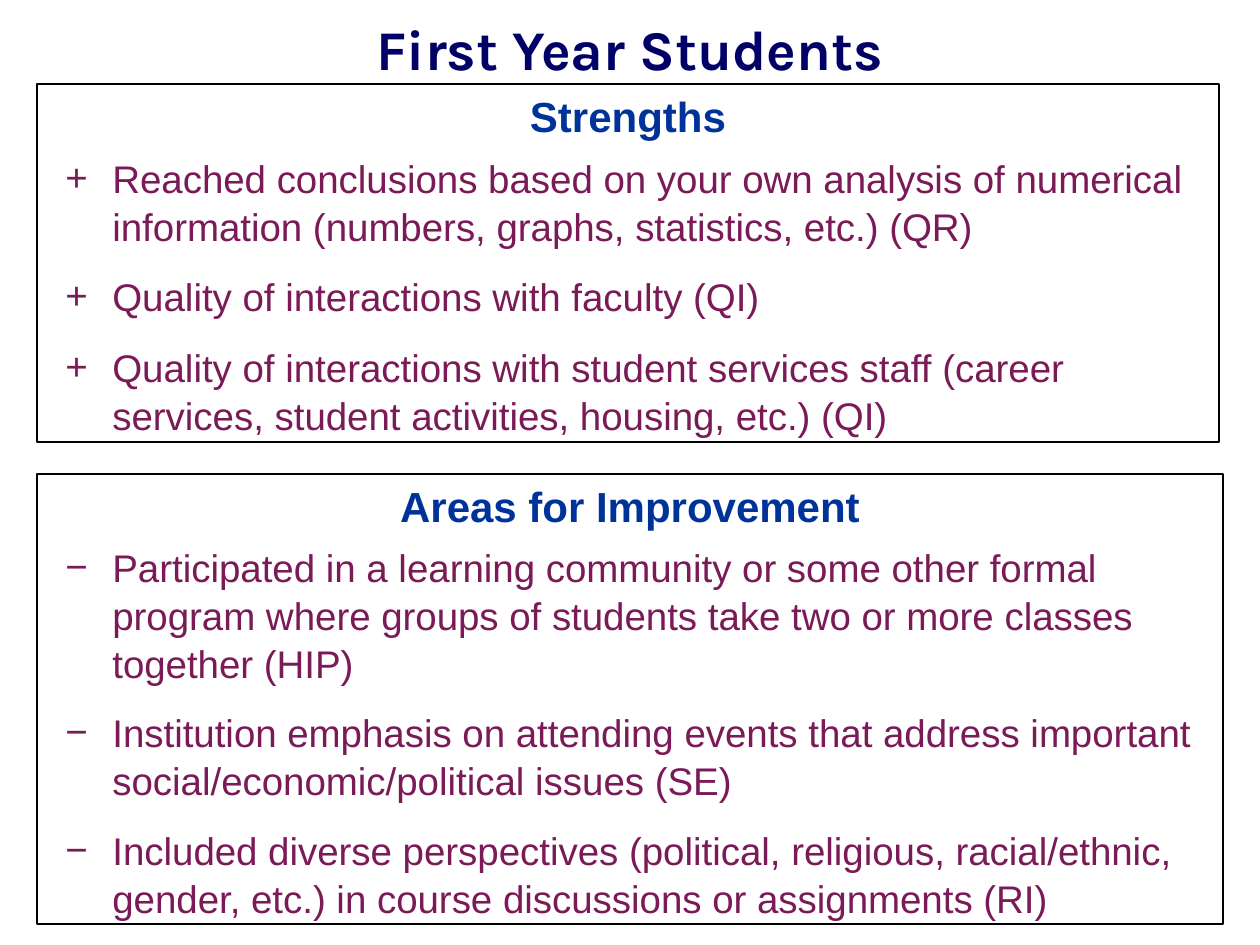
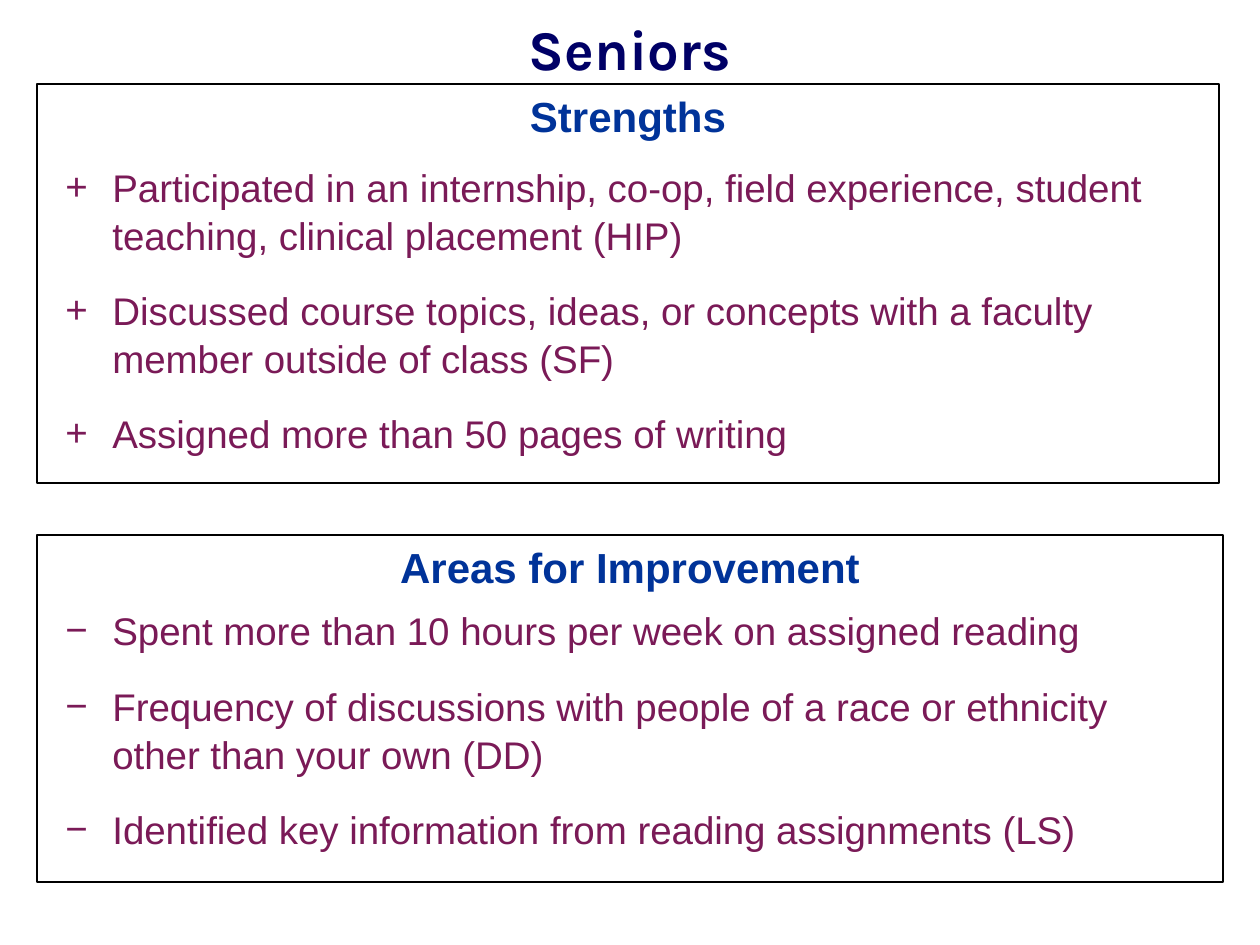
from lxml import etree
from pptx import Presentation
from pptx.dml.color import RGBColor
from pptx.enum.shapes import MSO_SHAPE
from pptx.enum.text import MSO_ANCHOR, MSO_AUTO_SIZE, PP_ALIGN
from pptx.oxml.ns import qn
from pptx.util import Emu, Pt

RECTANGLE = MSO_SHAPE.RECTANGLE
TOP = MSO_ANCHOR.TOP
GROW = MSO_AUTO_SIZE.SHAPE_TO_FIT_TEXT
CENTER = PP_ALIGN.CENTER
LEFT = PP_ALIGN.LEFT

PX_PER_INCH = 126
BODY_FONT = "Arial"
TITLE_FONT = "Karla"
NAVY = "000066"
BLUE = "003399"
PLUM = "7A1A57"
BLACK = "000000"

PANEL_LEFT = 37
STRENGTHS_WIDTH = 1182
IMPROVEMENT_WIDTH = 1186
ITEM_LEFT = 53
ITEM_WIDTH = 1165
ITEM_INDENT = 47
LINE_HEIGHT = 47
ITEM_PADDING = 12


def px(length):
    return Emu(round(length * 914400 / PX_PER_INCH))


def color(value):
    return RGBColor.from_string(value)


def write_text(shape, text, size, ink, font=BODY_FONT, bold=False,
               align=LEFT, before=0, after=0, spacing=None):
    frame = shape.text_frame
    frame.word_wrap = True
    frame.vertical_anchor = TOP
    para = frame.paragraphs[0]
    para.alignment = align
    para.space_before = Pt(before)
    para.space_after = Pt(after)
    if spacing:
        para.line_spacing = spacing
    span = para.add_run()
    span.text = text
    span.font.name = font
    span.font.size = Pt(size)
    span.font.bold = bold
    span.font.color.rgb = color(ink)
    return para


def add_bullet(para, mark):
    properties = para._p.get_or_add_pPr()
    properties.set("marL", str(px(ITEM_INDENT)))
    properties.set("indent", str(-px(ITEM_INDENT)))
    etree.SubElement(properties, qn("a:buFont")).set("typeface", BODY_FONT)
    etree.SubElement(properties, qn("a:buChar")).set("char", mark)


def add_title(page, text):
    box = page.shapes.add_textbox(px(37), px(15), px(1186), px(95))
    box.text_frame.margin_top = box.text_frame.margin_bottom = 0
    write_text(box, text, 32, NAVY, font=TITLE_FONT, bold=True, align=CENTER)


def add_item(page, top, lines, text, mark):
    height = ITEM_PADDING + LINE_HEIGHT * lines
    box = page.shapes.add_textbox(px(ITEM_LEFT), px(top), px(ITEM_WIDTH), px(height))
    box.text_frame.auto_size = GROW
    para = write_text(box, text, 22, PLUM, before=3, after=6, spacing=1.04)
    add_bullet(para, mark)
    return top + height


def add_panel(page, heading, mark, width, top, height, first_item, gap, items):
    panel = page.shapes.add_shape(RECTANGLE, px(PANEL_LEFT), px(top), px(width), px(height))
    panel.shadow.inherit = False
    panel.fill.background()
    panel.line.color.rgb = color(BLACK)
    panel.line.width = Pt(0.75)
    write_text(panel, heading, 24, BLUE, bold=True, align=CENTER, before=3, after=12)
    item_top = first_item
    for lines, text in items:
        item_top = add_item(page, item_top, lines, text, mark) + gap


def add_group_page(deck, title, gap, strengths, improvements):
    page = deck.slides.add_slide(deck.slide_layouts[6])
    add_panel(page, "Areas for Improvement", "−", IMPROVEMENT_WIDTH, gap=gap, **improvements)
    add_title(page, title)
    add_panel(page, "Strengths", "+", STRENGTHS_WIDTH, gap=gap, **strengths)


def main():
    deck = Presentation()
    deck.slide_width = px(1260)
    deck.slide_height = px(945)

    add_group_page(
        deck, "First Year Students", 12,
        strengths=dict(top=84, height=358, first_item=147, items=[
            (2, "Reached conclusions based on your own analysis of numerical "
                "information (numbers, graphs, statistics, etc.) (QR)"),
            (1, "Quality of interactions with faculty (QI)"),
            (2, "Quality of interactions with student services staff (career "
                "services, student activities, housing, etc.) (QI)"),
        ]),
        improvements=dict(top=474, height=450, first_item=536, items=[
            (3, "Participated in a learning community or some other formal program "
                "where groups of students take two or more classes together (HIP)"),
            (2, "Institution emphasis on attending events that address important "
                "social/economic/political issues (SE)"),
            (2, "Included diverse perspectives (political, religious, racial/ethnic, "
                "gender, etc.) in course discussions or assignments (RI)"),
        ]))

    add_group_page(
        deck, "Seniors", 17,
        strengths=dict(top=84, height=399, first_item=156, items=[
            (2, "Participated in an internship, co-op, field experience, student "
                "teaching, clinical placement (HIP)"),
            (2, "Discussed course topics, ideas, or concepts with a faculty member "
                "outside of class (SF)"),
            (1, "Assigned more than 50 pages of writing"),
        ]),
        improvements=dict(top=535, height=347, first_item=599, items=[
            (1, "Spent more than 10 hours per week on assigned reading"),
            (2, "Frequency of discussions with people of a race or ethnicity other "
                "than your own (DD)"),
            (1, "Identified key information from reading assignments (LS)"),
        ]))

    deck.save("out.pptx")


if __name__ == "__main__":
    main()
